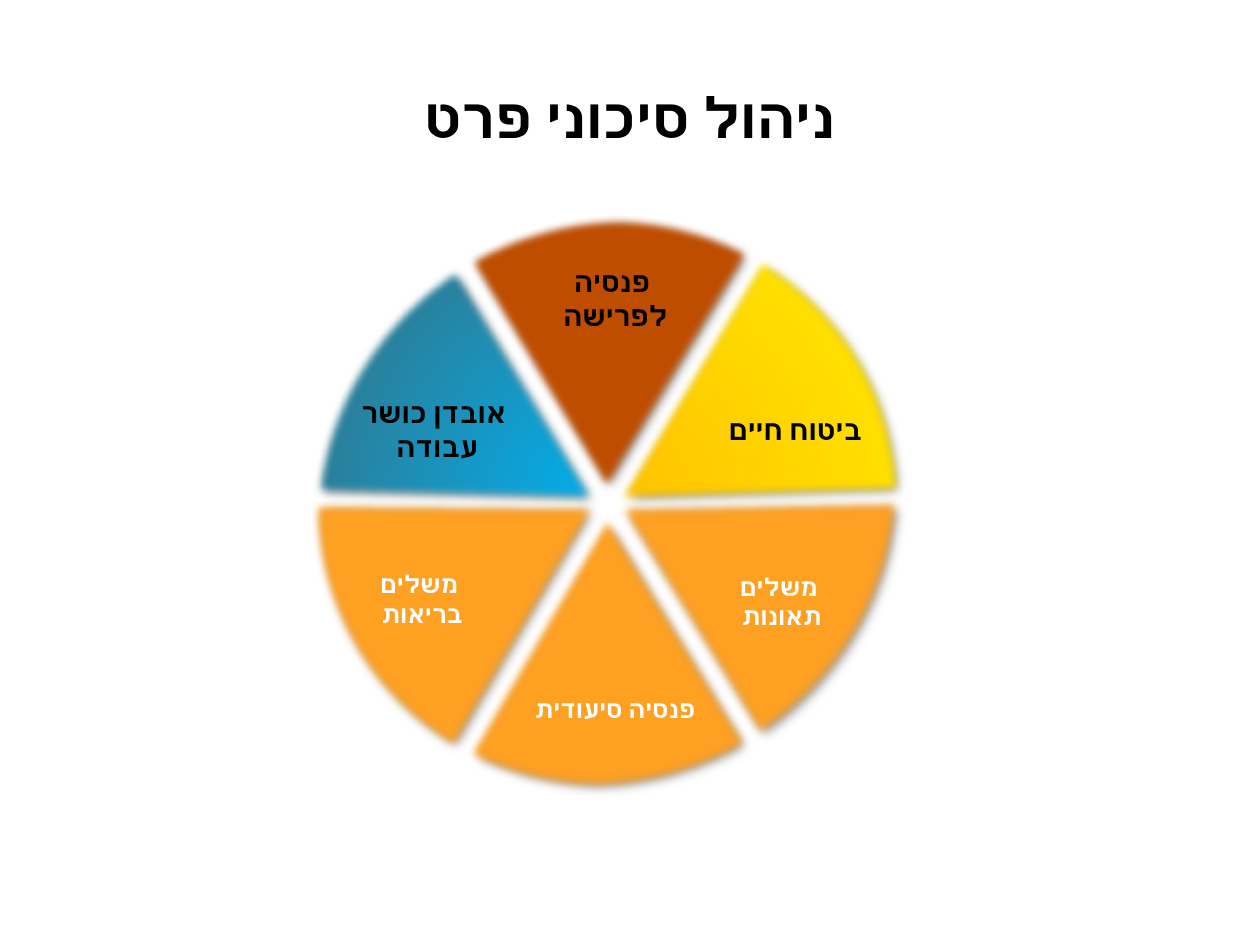
from lxml import etree
from pptx import Presentation
from pptx import util as u
from pptx.dml.color import RGBColor
from pptx.enum import shapes, text
from pptx.oxml import parse_xml
from pptx.oxml.ns import nsdecls, qn

C = {"black": "000000", "white": "FFFFFF", "rim": "BCB6AB",
     "blue": "00B0F0", "brown": "554E44", "orange": "FEA022",
     "rust": "BF4D00", "gold": "FFC000", "yellow": "FFFF00"}
FONT = "Lato"

prs = Presentation()
prs.slide_width, prs.slide_height = u.Cm(25.4), u.Cm(19.05)
s = prs.slides.add_slide(prs.slide_layouts[6])


def add_wedge(top, start, end, inner, outer):
    """Pie slice with a radial gradient, a soft edge and a shadow."""
    sp = s.shapes.add_shape(shapes.MSO_SHAPE.PIE, u.Cm(6.2), u.Cm(top),
                            u.Cm(12.07), u.Cm(11.58))
    sp.rotation = 328.7
    for i, angle in enumerate((start, end)):
        sp.adjustments[i] = angle * 0.6  # 60000 units a degree, scaled by 100000
    sp.line.fill.background()
    sp.shadow.inherit = False
    stops = "".join(f'<a:gs pos="{pos}"><a:srgbClr val="{C[name]}"/></a:gs>'
                    for pos, name in ((0, inner), (100000, outer), (100000, "rim")))
    pr = sp._element.spPr
    pr.find(qn("a:prstGeom")).addnext(parse_xml(
        f'<a:gradFill {nsdecls("a")} rotWithShape="1"><a:gsLst>{stops}</a:gsLst>'
        '<a:path path="circle"><a:fillToRect l="50000" t="50000" r="50000" b="50000"/>'
        '</a:path></a:gradFill>'))
    effects = pr.find(qn("a:effectLst"))
    effects.append(parse_xml(
        f'<a:outerShdw {nsdecls("a")} blurRad="50800" dist="38100" dir="2700000" '
        f'algn="tl" rotWithShape="0"><a:srgbClr val="{C["black"]}">'
        '<a:alpha val="40000"/></a:srgbClr></a:outerShdw>'))
    effects.append(parse_xml(f'<a:softEdge {nsdecls("a")} rad="63500"/>'))


def add_label(words, left, top, width, height, size, color):
    """Centred right-to-left bold text."""
    sp = s.shapes.add_textbox(u.Cm(left), u.Cm(top), u.Cm(width), u.Cm(height))
    tf = sp.text_frame
    tf.word_wrap = True
    p = tf.paragraphs[0]
    p.text = words
    p.alignment = text.PP_ALIGN.CENTER
    p._p.get_or_add_pPr().set("rtl", "1")
    p.font.size, p.font.bold, p.font.name = u.Pt(size), True, FONT
    p.font.color.rgb = RGBColor.from_string(C[color])
    etree.SubElement(p.font._element, qn("a:cs"), typeface=FONT)
    return tf


# Title
tf = add_label("ניהול סיכוני פרט", 1.27, 0.76, 22.86, 3.18, 32, "black")
tf.vertical_anchor = text.MSO_ANCHOR.MIDDLE

# Wheel: top, start and end angle in degrees, centre colour, edge colour
for wedge in (
    (4.39, 212.73, 270.39, "blue", "brown"),
    (4.32, 151.55, 211.75, "orange", "orange"),
    (4.32, 89.87, 151.34, "orange", "orange"),
    (4.32, 30.31, 89.82, "orange", "orange"),
    (4.39, 270.55, 332.13, "rust", "rust"),
    (4.39, 332.01, 29.57, "gold", "yellow"),
):
    add_wedge(*wedge)

# Wedge labels: words, left, top, width, height, size, colour
for label in (
    ("ביטוח חיים ", 13.87, 8.2, 4.19, 1.93, 16, "black"),
    ("פנסיה לפרישה ", 10.46, 5.21, 3.76, 1.93, 16, "black"),
    ("אובדן כושר עבודה ", 6.65, 7.85, 4.19, 2.74, 16, "black"),
    ("משלים תאונות ", 14.15, 11.4, 3.1, 1.73, 14, "white"),
    ("פנסיה סיעודית ", 10.03, 13.87, 4.62, 1.73, 14, "white"),
    ("משלים בריאות ", 6.9, 11.35, 3.1, 1.73, 14, "white"),
):
    add_label(*label)

prs.save("out.pptx")
